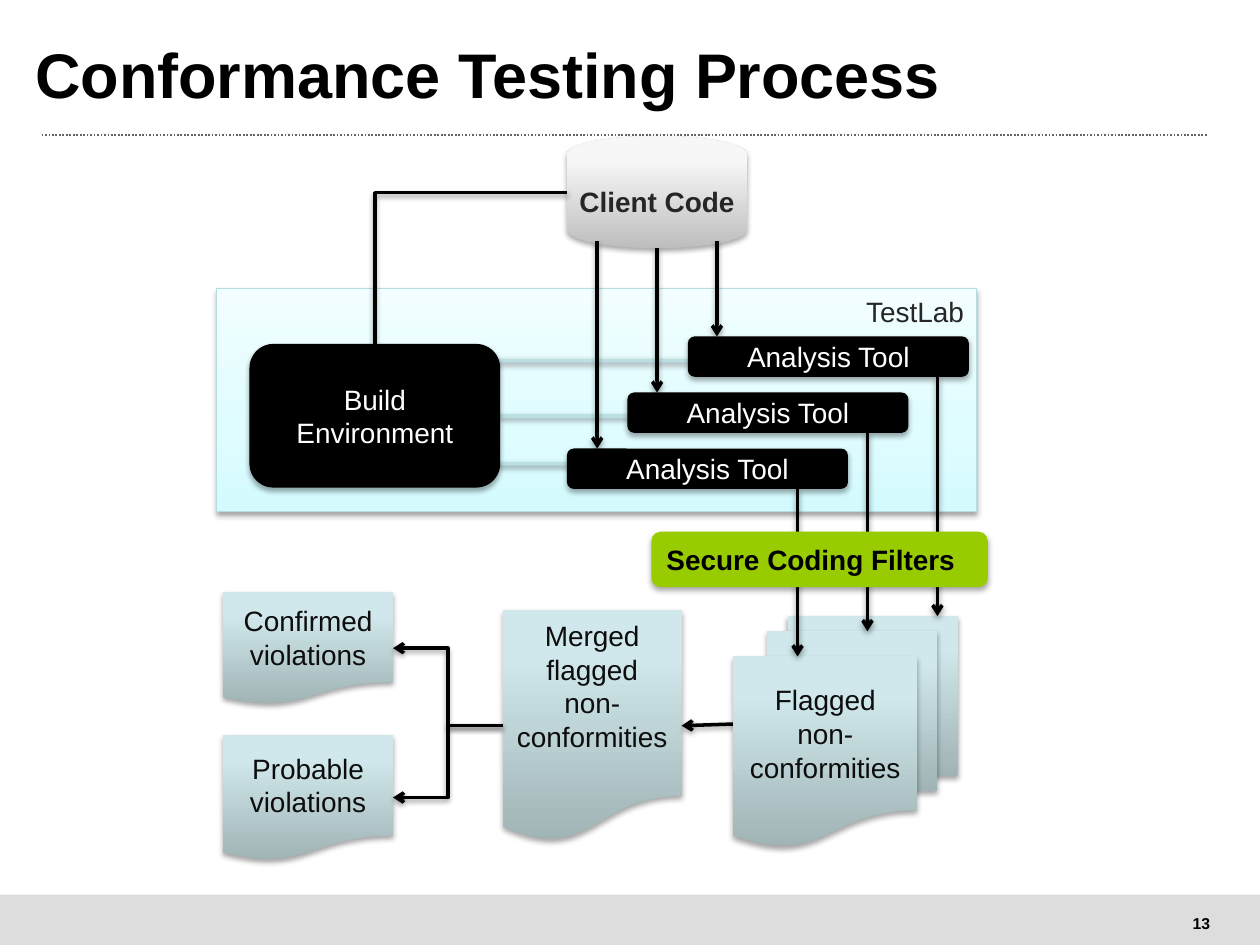
"""Build the conformance testing process slide."""
import pptx
import pptx.util
import pptx.dml.color
import pptx.enum.dml
import pptx.enum.shapes
import pptx.enum.text
import pptx.oxml
import pptx.oxml.ns
from pptx.util import Inches

KINDS = pptx.enum.shapes.MSO_SHAPE
LINES = pptx.enum.shapes.MSO_CONNECTOR
ALIGN = pptx.enum.text.PP_ALIGN
ANCHOR = pptx.enum.text.MSO_ANCHOR
TOP, LEFT, RIGHT = 0, 1, 3

PAPER = [(0, "A0B3B5"), (80, "D0E8EB"), (100, "D1EAEC")]
SILVER = [(0, "BEBEBE"), (80, "F7F7F7"), (100, "F8F8F8")]
PANEL = [(0, "D3FBFF"), (35, "DFFCFF"), (100, "F2FEFF")]
BLACK, WHITE, GREEN, DARK, INK = "000000", "FFFFFF", "99CC00", "262626", "0D0D0D"

BUILD_LINKS = [(2.83, 4.66, 3.68), (3.96, 6.19, 3.3), (2.91, 5.85, 2.86)]
TOOLS = ["Analysis Tool"] * 3
TOOL_WIDTH, TOOL_HEIGHT = 2.23, 0.32
FEED_TOPS = [1.91, 1.97, 1.91]
REPORT_TOPS = [5.21, 5.01, 4.89]
BACK_SHEETS = [(6.25, 4.89, 1.35, 1.27), (6.09, 5.01, 1.35, 1.27)]

deck = pptx.Presentation()
deck.slide_width, deck.slide_height = Inches(10), Inches(7.5)
page = deck.slides.add_slide(deck.slide_layouts[6])


def color(value):
    return pptx.dml.color.RGBColor.from_string(value)


def add_shadow(properties, opacity, distance):
    effects = properties.find(pptx.oxml.ns.qn("a:effectLst"))
    if effects is None:
        effects = pptx.oxml.parse_xml(f"<a:effectLst {pptx.oxml.ns.nsdecls('a')}/>")
        properties.append(effects)
    effects.append(pptx.oxml.parse_xml(
        f'<a:outerShdw {pptx.oxml.ns.nsdecls("a")} blurRad="40000" dist="{distance}" dir="5400000" '
        f'rotWithShape="0"><a:srgbClr val="000000"><a:alpha val="{opacity}000"/></a:srgbClr></a:outerShdw>'))


def paint(shape, fill):
    if isinstance(fill, str):
        shape.fill.solid()
        shape.fill.fore_color.rgb = color(fill)
        return
    shape.fill.gradient()
    shape.fill.gradient_angle = 90
    stops = shape._element.spPr.find(".//" + pptx.oxml.ns.qn("a:gsLst"))
    for stop in list(stops):
        stops.remove(stop)
    for position, value in fill:
        stops.append(pptx.oxml.parse_xml(
            f'<a:gs {pptx.oxml.ns.nsdecls("a")} pos="{position}000"><a:srgbClr val="{value}"/></a:gs>'))


def write(box, text, ink, size=16, bold=False, align=ALIGN.CENTER, anchor=ANCHOR.MIDDLE):
    frame = box.text_frame
    frame.text = text
    frame.word_wrap = True
    frame.vertical_anchor = anchor
    for para in frame.paragraphs:
        para.alignment = align
        for span in para.runs:
            span.font.name = "Arial"
            span.font.size = pptx.util.Pt(size)
            span.font.bold = bold
            span.font.color.rgb = color(ink)


def add_box(kind, place, fill, text="", ink=INK, shadow=True, **style):
    box = page.shapes.add_shape(kind, *map(Inches, place))
    paint(box, fill)
    box.line.fill.background()
    box.shadow.inherit = False
    if shadow:
        add_shadow(box._element.spPr, 35, 23000)
    if text:
        write(box, text, ink, **style)
    return box


def add_text(place, text, **style):
    box = page.shapes.add_textbox(*map(Inches, place))
    write(box, text, BLACK, bold=True, **style)
    return box


def add_line(start, end, kind=LINES.STRAIGHT, ink=BLACK, width=2, arrow=True, shadow=True):
    line = page.shapes.add_connector(kind, *map(Inches, start + end))
    line.line.color.rgb = color(ink)
    line.line.width = pptx.util.Pt(width)
    if arrow:
        line.line._get_or_add_ln().append(
            pptx.oxml.parse_xml(f'<a:tailEnd {pptx.oxml.ns.nsdecls("a")} type="arrow"/>'))
    properties = line._element.spPr
    if shadow:
        add_shadow(properties, 38, 20000)
    else:
        properties.append(pptx.oxml.parse_xml(f"<a:effectLst {pptx.oxml.ns.nsdecls('a')}/>"))
    return line


add_box(KINDS.RECTANGLE, (0, 7.1, 10, 0.4), "DDDDDD", shadow=False)
add_text((9.36, 7.2, 0.35, 0.25), "13", size=9).text_frame.word_wrap = False
rule = add_line((0.33, 1.07), (9.58, 1.07), ink="666666", width=1, arrow=False, shadow=False)
rule.line.dash_style = pptx.enum.dml.MSO_LINE.ROUND_DOT
title = add_text((0.28, 0.25, 9.27, 0.78), "Conformance Testing Process", size=36, align=ALIGN.LEFT)
title.text_frame.margin_left = title.text_frame.margin_right = 0
title.text_frame.margin_top = title.text_frame.margin_bottom = 0
title.text_frame.paragraphs[0].line_spacing = 0.8

panel = add_box(KINDS.RECTANGLE, (1.72, 2.29, 6.03, 1.77), PANEL, "TestLab", DARK,
                align=ALIGN.RIGHT, anchor=ANCHOR.TOP)
panel.line.color.rgb = color("B6DCDF")
panel.line.width = pptx.util.Pt(0.75)
for left, right, height in BUILD_LINKS:
    add_line((left, height), (right, height), ink="BBE0E3", arrow=False)

merged = add_box(KINDS.FLOWCHART_DOCUMENT, (3.99, 4.84, 1.42, 1.84), PAPER,
                 "Merged flagged non-conformities")
merged.text_frame.margin_bottom = Inches(0.32)
probable = add_box(KINDS.FLOWCHART_DOCUMENT, (1.77, 5.83, 1.35, 1), PAPER, "Probable violations")
confirmed = add_box(KINDS.FLOWCHART_DOCUMENT, (1.77, 4.7, 1.35, 0.89), PAPER, "Confirmed\nviolations")
client = add_box(KINDS.FLOWCHART_MAGNETIC_DISK, (4.5, 1.08, 1.43, 0.89), SILVER, "Client Code", DARK, bold=True)
client.text_frame.margin_left = client.text_frame.margin_right = Inches(0.05)
build = add_box(KINDS.FLOWCHART_ALTERNATE_PROCESS, (1.98, 2.73, 1.99, 1.14), BLACK, "Build Environment", WHITE)

supply = add_line((4.5, 1.53), (2.97, 2.73), LINES.ELBOW, arrow=False)
supply._element.spPr.prstGeom.set("prst", "bentConnector2")
supply.end_connect(build, TOP)
for result, middle in ((confirmed, 5.14), (probable, 6.33)):
    branch = add_line((3.99, 5.75), (3.12, middle), LINES.ELBOW)
    branch.begin_connect(merged, LEFT)
    branch.end_connect(result, RIGHT)

merge = add_line((6.92, 5.71), (5.41, 5.75))
merge.end_connect(merged, RIGHT)
for sheet in BACK_SHEETS:
    add_box(KINDS.RECTANGLE, sheet, PAPER)
add_box(KINDS.FLOWCHART_DOCUMENT, (5.82, 5.21, 1.46, 1.52), PAPER, "Flagged non-conformities")

for index, (name, feed_top, report_top) in enumerate(zip(TOOLS, FEED_TOPS, REPORT_TOPS)):
    left, top = 4.5 + 0.48 * index, 3.56 - 0.445 * index
    feed, report = 4.74 + 0.475 * index, 6.33 + 0.555 * index
    add_box(KINDS.ROUNDED_RECTANGLE, (left, top, TOOL_WIDTH, TOOL_HEIGHT), BLACK, name, WHITE)
    add_line((feed, feed_top), (feed, top))
    add_line((report, top + TOOL_HEIGHT), (report, report_top))

add_box(KINDS.ROUNDED_RECTANGLE, (5.17, 4.22, 2.67, 0.44), GREEN, "Secure Coding Filters", BLACK,
        bold=True, align=ALIGN.LEFT)

deck.save("out.pptx")
